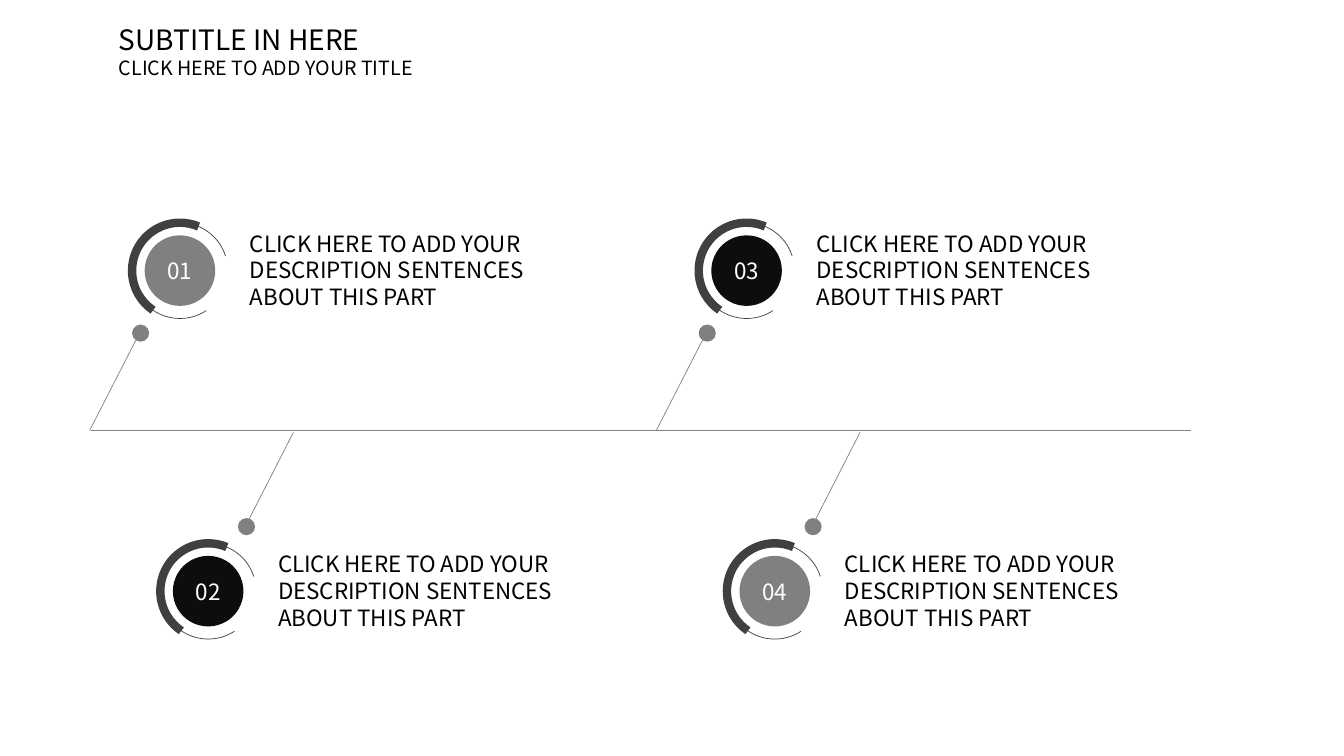
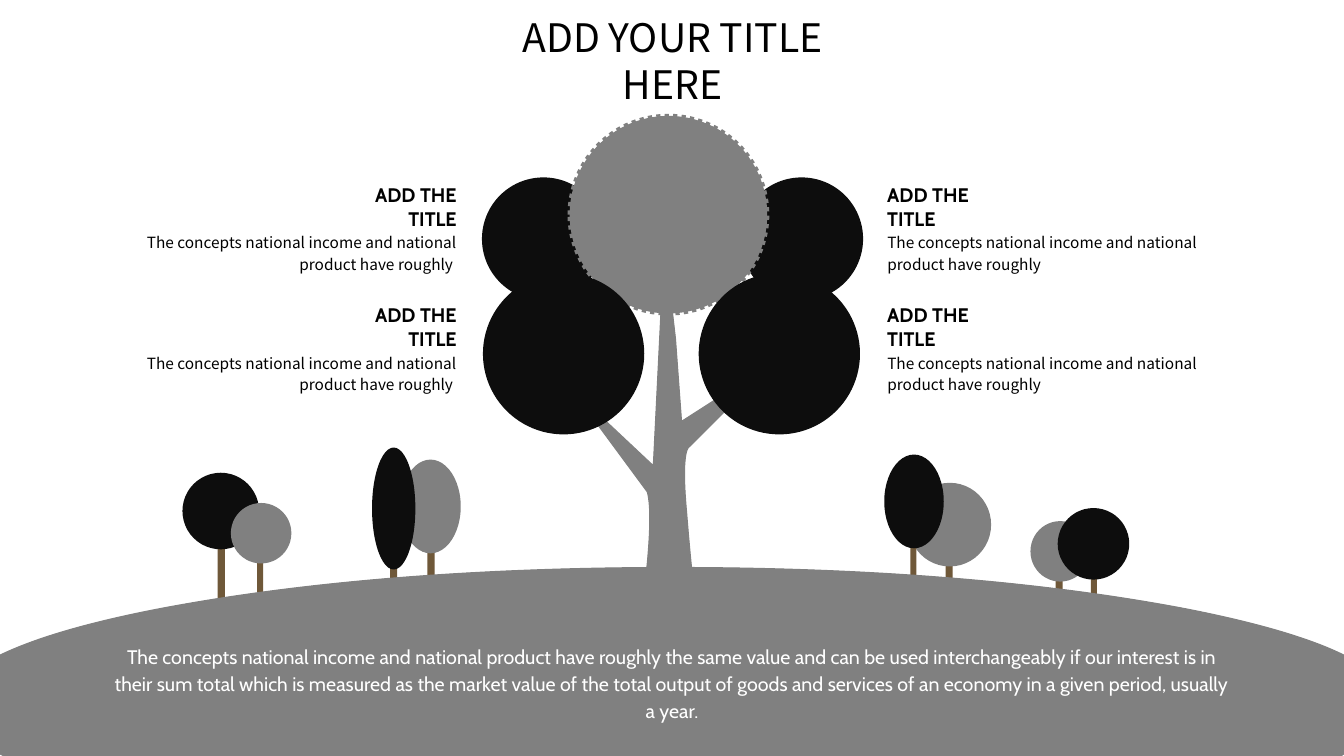
from lxml.etree import SubElement
from pptx import Presentation
from pptx.dml.color import RGBColor
from pptx.enum.dml import MSO_LINE
from pptx.enum.shapes import MSO_CONNECTOR, MSO_SHAPE
from pptx.enum.text import MSO_ANCHOR, MSO_AUTO_SIZE, PP_ALIGN
from pptx.oxml.ns import qn
from pptx.util import Inches, Pt

BLACK = RGBColor(0x00, 0x00, 0x00)
WHITE = RGBColor(0xFF, 0xFF, 0xFF)
INK = RGBColor(0x0D, 0x0D, 0x0D)
GRAY = RGBColor(0x80, 0x80, 0x80)
CHARCOAL = RGBColor(0x40, 0x40, 0x40)
BARK = RGBColor(0x6F, 0x58, 0x39)
SANS = "Noto Sans CJK SC"
CABIN = "Cabin"

STEP_TEXT = "CLICK HERE TO ADD YOUR DESCRIPTION SENTENCES ABOUT THIS PART"
STEP_PITCH = 5.62
ROWS = [
    {"foot": (0.89, 4.27), "tip": (1.36, 3.35), "dot": (1.31, 3.22), "ring": (1.31, 2.21)},
    {"foot": (2.91, 4.29), "tip": (2.44, 5.21), "dot": (2.36, 5.14), "ring": (1.59, 5.39)},
]
STEPS = [("01", GRAY), ("02", INK), ("03", INK), ("04", GRAY)]
RING_SIZE, BADGE_SIZE, DOT_SIZE = 0.95, 0.7, 0.17
ARCS = [(56.77, 342.15, 0.5), (124.15, 292.86, 6)]

SMALL_TREES = [
    [
        (BARK, 9.38, 5, 0.07, 0.75),
        (GRAY, 9.01, 4.79, 0.82, 0.83),
        (BARK, 9.03, 5, 0.06, 0.75),
        (INK, 8.77, 4.51, 0.59, 0.93),
    ],
    [
        (BARK, 3.87, 5.61, 0.07, 0.22),
        (BARK, 4.24, 5, 0.07, 0.75),
        (GRAY, 3.97, 4.56, 0.6, 0.93),
        (INK, 3.69, 4.44, 0.43, 1.21),
    ],
    [
        (BARK, 2.16, 5.25, 0.07, 0.75),
        (BARK, 2.55, 5.44, 0.06, 0.5),
        (INK, 1.81, 4.69, 0.76, 0.76),
        (GRAY, 2.29, 4.99, 0.6, 0.6),
    ],
    [
        (BARK, 10.47, 5.28, 0.07, 0.64),
        (GRAY, 10.22, 5.17, 0.59, 0.6),
        (BARK, 10.82, 5.49, 0.06, 0.5),
        (INK, 10.49, 5.04, 0.71, 0.71),
    ],
]
BACK_LEAVES = [(7.34, 1.76, 1.22), (4.78, 1.76, 1.22)]
CROWN = (5.65, 1.15, 1.96)
FRONT_LEAVES = [(6.93, 2.71, 1.6), (4.79, 2.71, 1.6)]
TRUNK = [
    (6.36, 6.08),
    (6.36, 6.08, 6.5, 5.16, 6.42, 4.88),
    (5.66, 3.85), (6.48, 4.62), (6.59, 2.4), (6.7, 3.36),
    (6.76, 4.18), (7.68, 3.59), (6.84, 4.43),
    (6.84, 4.43, 6.75, 4.43, 6.81, 5.08),
    (6.86, 5.72, 6.91, 6.07, 6.91, 6.07),
]
HILL = [
    (0, 7.48), (0, 6.5),
    (0.35, 6.33, 0.89, 6.17, 1.63, 6.03),
    (3.02, 5.77, 4.7, 5.63, 6.67, 5.63),
    (8.64, 5.63, 10.32, 5.77, 11.71, 6.03),
    (12.44, 6.17, 12.99, 6.33, 13.33, 6.5),
    (13.33, 7.48), (13.3, 7.5), (0.04, 7.5),
]
HILL_TEXT = (
    "The concepts national income and national product have roughly the same value "
    "and can be used interchangeably if our interest is in their sum total which is "
    "measured as the market value of the total output of goods and services of an "
    "economy in a given period, usually a year."
)
CALLOUT_TITLE = "ADD THE TITLE"
CALLOUT_TEXT = "The concepts national income and national product have roughly"
CALLOUT_SIDES = [
    (8.8, 8.8, PP_ALIGN.LEFT, CALLOUT_TEXT),
    (3.33, 1.44, PP_ALIGN.RIGHT, CALLOUT_TEXT + " "),
]
CALLOUT_TOPS = [(1.93, 2.29), (3.12, 3.49)]


def set_text(box, lines, font=SANS, color=BLACK, align=PP_ALIGN.LEFT,
             anchor=MSO_ANCHOR.TOP, inset=True, bold=False, spacing=None, before=0):
    frame = box.text_frame
    frame.word_wrap = True
    frame.auto_size = MSO_AUTO_SIZE.NONE
    frame.vertical_anchor = anchor
    if not inset:
        frame.margin_left = frame.margin_right = frame.margin_top = frame.margin_bottom = 0
    for index, (text, size) in enumerate(lines):
        para = frame.add_paragraph() if index else frame.paragraphs[0]
        para.text = text
        para.alignment = align
        para.space_before = Pt(before)
        if spacing:
            para.line_spacing = spacing
        para.font.name = font
        para.font.size = Pt(size)
        para.font.bold = bold
        para.font.color.rgb = color


def add_text(page, left, top, width, height, lines, **style):
    box = page.shapes.add_textbox(Inches(left), Inches(top), Inches(width), Inches(height))
    set_text(box, lines, **style)


def add_page(deck, left, top, width, height, lines, **style):
    page = deck.slides.add_slide(deck.slide_layouts[5])
    title = page.shapes.title
    title.left, title.top = Inches(left), Inches(top)
    title.width, title.height = Inches(width), Inches(height)
    set_text(title, lines, **style)
    return page


def paint(shape, fill, line=None, width=0.75):
    shape.shadow.inherit = False
    if fill is None:
        shape.fill.background()
    else:
        shape.fill.solid()
        shape.fill.fore_color.rgb = fill
    if line is None:
        shape.line.fill.background()
    else:
        shape.line.color.rgb = line
        shape.line.width = Pt(width)
    return shape


def add_shape(shapes, kind, left, top, width, height, fill, line=None, weight=0.75):
    shape = shapes.add_shape(kind, Inches(left), Inches(top), Inches(width), Inches(height))
    return paint(shape, fill, line, weight)


def add_circle(page, left, top, size, fill, line=None, weight=0.75):
    return add_shape(page.shapes, MSO_SHAPE.OVAL, left, top, size, size, fill, line, weight)


def add_line(page, start, end):
    line = page.shapes.add_connector(
        MSO_CONNECTOR.STRAIGHT, *(Inches(value) for value in (*start, *end)))
    line.line.color.rgb = GRAY
    line.line.width = Pt(0.5)
    SubElement(line._element.spPr, qn("a:effectLst"))


def add_outline(page, outline):
    ends = [(Inches(part[-2]), Inches(part[-1])) for part in outline]
    builder = page.shapes.build_freeform(*ends[0])
    builder.add_line_segments(ends[1:], close=True)
    shape = paint(builder.convert_to_shape(), GRAY, GRAY)
    segments = list(shape._element.iter(qn("a:lnTo")))
    for segment, part in zip(segments, outline[1:]):
        if len(part) == 6:
            segment.tag = qn("a:cubicBezTo")
            for child in list(segment):
                segment.remove(child)
            for x, y in zip(part[::2], part[1::2]):
                SubElement(segment, qn("a:pt"), x=str(Inches(x) - shape.left),
                           y=str(Inches(y) - shape.top))


def add_step(page, number, fill, row, shift):
    (foot_x, foot_y), (tip_x, tip_y) = row["foot"], row["tip"]
    add_line(page, (foot_x + shift, foot_y), (tip_x + shift, tip_y))
    dot_x, dot_y = row["dot"]
    add_circle(page, dot_x + shift, dot_y, DOT_SIZE, GRAY)
    left, top = row["ring"][0] + shift, row["ring"][1]
    margin = (RING_SIZE - BADGE_SIZE) / 2
    badge = add_circle(page, left + margin, top + margin, BADGE_SIZE, fill)
    set_text(badge, [(number, 16)], color=WHITE, align=PP_ALIGN.CENTER,
             anchor=MSO_ANCHOR.MIDDLE)
    ring = page.shapes.add_group_shape()
    for start, end, weight in ARCS:
        arc = add_shape(ring.shapes, MSO_SHAPE.ARC, left, top, RING_SIZE, RING_SIZE,
                        None, CHARCOAL, weight)
        arc.adjustments[0] = start * 0.6
        arc.adjustments[1] = end * 0.6
    add_text(page, left + 1.07, top + 0.02, 3.22, 0.91, [(STEP_TEXT, 16)], before=6)


def build_timeline(deck):
    page = add_page(deck, 1.08, 0.17, 4.39, 0.67,
                    [("SUBTITLE IN HERE", 20), ("CLICK HERE TO ADD YOUR TITLE", 14)])
    add_line(page, (0.9, 4.27), (11.81, 4.27))
    for index, (number, fill) in enumerate(STEPS):
        column, row = divmod(index, len(ROWS))
        add_step(page, number, fill, ROWS[row], column * STEP_PITCH)


def build_tree(deck):
    middle = MSO_ANCHOR.MIDDLE
    page = add_page(deck, 4.58, 0.31, 4.18, 0.57, [("ADD YOUR TITLE HERE", 28)],
                    align=PP_ALIGN.CENTER, anchor=middle)
    for parts in SMALL_TREES:
        group = page.shapes.add_group_shape()
        for color, *bounds in parts:
            kind = MSO_SHAPE.RECTANGLE if color == BARK else MSO_SHAPE.OVAL
            add_shape(group.shapes, kind, *bounds, color)
    for leaf in BACK_LEAVES:
        add_circle(page, *leaf, INK)
    add_outline(page, TRUNK)
    add_outline(page, HILL)
    add_text(page, 1.13, 6.37, 11.07, 0.86, [(HILL_TEXT, 14)], font=CABIN, color=WHITE,
             align=PP_ALIGN.CENTER, inset=False, spacing=1.14)
    crown = add_circle(page, *CROWN, GRAY, GRAY, 3)
    crown.line.dash_style = MSO_LINE.ROUND_DOT
    for leaf in FRONT_LEAVES:
        add_circle(page, *leaf, INK)
    for title_left, text_left, align, text in CALLOUT_SIDES:
        for title_top, text_top in CALLOUT_TOPS:
            add_text(page, title_left, title_top, 1.2, 0.24, [(CALLOUT_TITLE, 14)],
                     font=CABIN, align=align, anchor=middle, inset=False, bold=True)
            add_text(page, text_left, text_top, 3.09, 0.42, [(text, 11)],
                     align=align, anchor=middle, inset=False, spacing=1.14)


def main():
    deck = Presentation()
    deck.slide_width, deck.slide_height = Inches(13.33), Inches(7.5)
    build_timeline(deck)
    build_tree(deck)
    deck.save("out.pptx")


if __name__ == "__main__":
    main()
